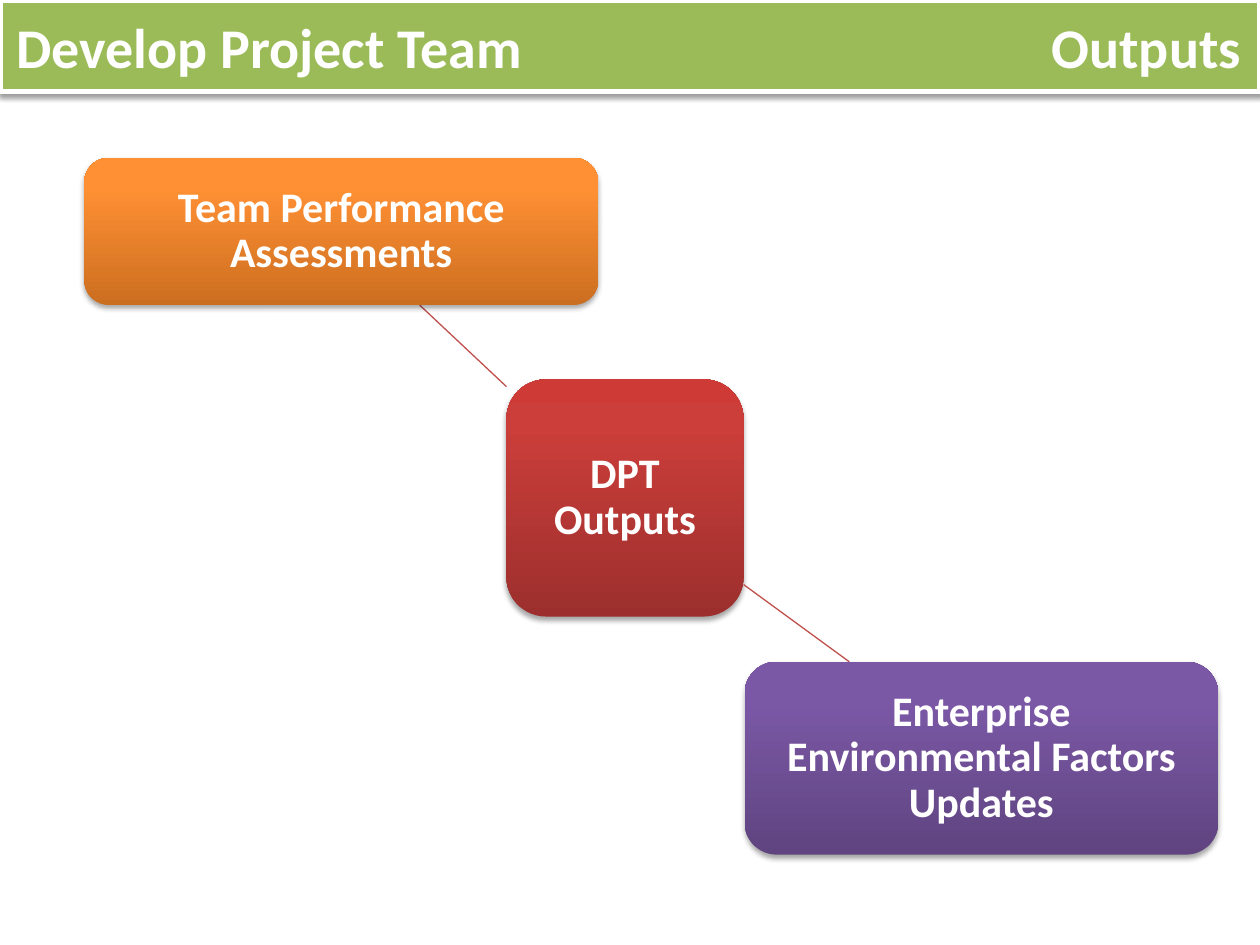
from copy import deepcopy

from lxml import etree
from pptx import Presentation
from pptx.dml.color import RGBColor
from pptx.enum.shapes import MSO_CONNECTOR, MSO_SHAPE
from pptx.enum.text import MSO_ANCHOR, MSO_AUTO_SIZE, PP_ALIGN
from pptx.oxml.ns import qn
from pptx.util import Cm, Pt

ROUNDED = MSO_SHAPE.ROUNDED_RECTANGLE
STRAIGHT = MSO_CONNECTOR.STRAIGHT
MIDDLE = MSO_ANCHOR.MIDDLE
NO_AUTOFIT = MSO_AUTO_SIZE.NONE
LEFT, CENTER = PP_ALIGN.LEFT, PP_ALIGN.CENTER

WHITE = RGBColor(0xFF, 0xFF, 0xFF)
GREEN = RGBColor(0x9B, 0xBB, 0x59)
LINK_RED = RGBColor(0xC0, 0x50, 0x4D)
# Gradients run from the bottom edge to the top edge
RED = [RGBColor(0x9C, 0x2F, 0x2D), RGBColor(0xCB, 0x3E, 0x3A), RGBColor(0xCE, 0x3B, 0x37)]
ORANGE = [RGBColor(0xCC, 0x6E, 0x20), RGBColor(0xFF, 0x90, 0x34), RGBColor(0xFF, 0x91, 0x36)]
PURPLE = [RGBColor(0x5F, 0x44, 0x80), RGBColor(0x7B, 0x58, 0xA6), RGBColor(0x7C, 0x57, 0xA8)]
STOPS = (0, 0.8, 1)

SLIDE_W, SLIDE_H = 25.4, 19.05
HEADER_H = 1.85

# Boxes in cm: left, top, width, height, relative to the diagram area
HUB = ("DPT Outputs", (10.21, 5.8, 4.78, 4.78), RED)
OUTPUTS = [
    ("Team Performance Assessments", (1.7, 1.33, 10.36, 2.97), ORANGE),
    ("Enterprise Environmental Factors Updates", (15.01, 11.49, 9.55, 3.89), PURPLE),
]


def set_all(target, values):
    for name, value in values.items():
        setattr(target, name, value)


def format_text(shape, text, size, frame_format, paragraph_format):
    frame = shape.text_frame
    set_all(frame, {"word_wrap": True, "auto_size": NO_AUTOFIT,
                    "vertical_anchor": MIDDLE, **frame_format})
    frame.text = text
    paragraph = frame.paragraphs[0]
    set_all(paragraph, paragraph_format)
    font = paragraph.runs[0].font
    set_all(font, {"name": "Calibri", "size": Pt(size), "bold": True})
    font.color.rgb = WHITE
    return paragraph


def add_shadow(shape, distance, opacity):
    shape.shadow.inherit = False
    effects = shape.element.spPr.find(qn("a:effectLst"))
    shadow = etree.SubElement(effects, qn("a:outerShdw"), blurRad=str(Pt(3.1)),
                              dist=str(Pt(distance)), dir="5400000", rotWithShape="0")
    black = etree.SubElement(shadow, qn("a:srgbClr"), val="000000")
    etree.SubElement(black, qn("a:alpha"), val=str(opacity * 1000))


def fill_gradient(shape, colors):
    shape.fill.gradient()
    shape.fill.gradient_angle = 90
    stop_list = shape.element.spPr.find(".//" + qn("a:gsLst"))
    stop_list.append(deepcopy(stop_list[-1]))
    for stop, position, color in zip(shape.fill.gradient_stops, STOPS, colors):
        stop.position = position
        stop.color.rgb = color


def build_header(slide, left, top, width, height):
    header = slide.shapes.title
    set_all(header, {"left": Cm(left), "top": Cm(top),
                     "width": Cm(width), "height": Cm(height)})
    header.fill.solid()
    header.fill.fore_color.rgb = GREEN
    header.line.color.rgb = WHITE
    header.line.width = Pt(3)
    add_shadow(header, 1.6, 38)
    inset = 0.33
    heading = format_text(header, "Develop Project Team\tOutputs", 32,
                          {"margin_left": Cm(inset), "margin_right": Cm(0.2)},
                          {"alignment": LEFT})
    # A right tab pushes the second word to the far edge
    tabs = etree.SubElement(heading._p.get_or_add_pPr(), qn("a:tabLst"))
    etree.SubElement(tabs, qn("a:tab"), pos=str(Cm(width - 2 * inset - 0.05)), algn="r")


def add_node(slide, text, box, colors):
    node = slide.shapes.add_shape(ROUNDED, *map(Cm, box))
    fill_gradient(node, colors)
    node.line.fill.background()
    add_shadow(node, 1.8, 35)
    margins = {f"margin_{side}": Cm(0.18) for side in ("left", "right", "top", "bottom")}
    format_text(node, text, 24, margins, {"alignment": CENTER, "line_spacing": 0.9})


def center_of(box):
    left, top, width, height = box
    return left + width / 2, top + height / 2


def edge_toward(box, target):
    """Point where the line from the box centre to target leaves the box."""
    x, y = center_of(box)
    dx, dy = target[0] - x, target[1] - y
    scale = 1 / max(abs(dx) / (box[2] / 2), abs(dy) / (box[3] / 2))
    return x + dx * scale, y + dy * scale


def add_link(slide, hub_box, output_box):
    start = edge_toward(hub_box, center_of(output_box))
    end = edge_toward(output_box, center_of(hub_box))
    link = slide.shapes.add_connector(STRAIGHT, *map(Cm, start + end))
    link.line.color.rgb = LINK_RED
    link.line.width = Pt(0.75)
    etree.SubElement(link._element.spPr, qn("a:effectLst"))


def build_diagram(slide, left, top):
    def place(box):
        return (left + box[0], top + box[1], *box[2:])

    hub_text, hub_box, hub_colors = HUB
    add_node(slide, hub_text, place(hub_box), hub_colors)
    for text, box, colors in OUTPUTS:
        add_link(slide, place(hub_box), place(box))
        add_node(slide, text, place(box), colors)


def main():
    presentation = Presentation()
    set_all(presentation, {"slide_width": Cm(SLIDE_W), "slide_height": Cm(SLIDE_H)})
    title_only = presentation.slide_layouts[5]
    slide = presentation.slides.add_slide(title_only)
    build_header(slide, 0, 0, SLIDE_W, HEADER_H)
    build_diagram(slide, 0, HEADER_H)
    presentation.save("out.pptx")


if __name__ == "__main__":
    main()
